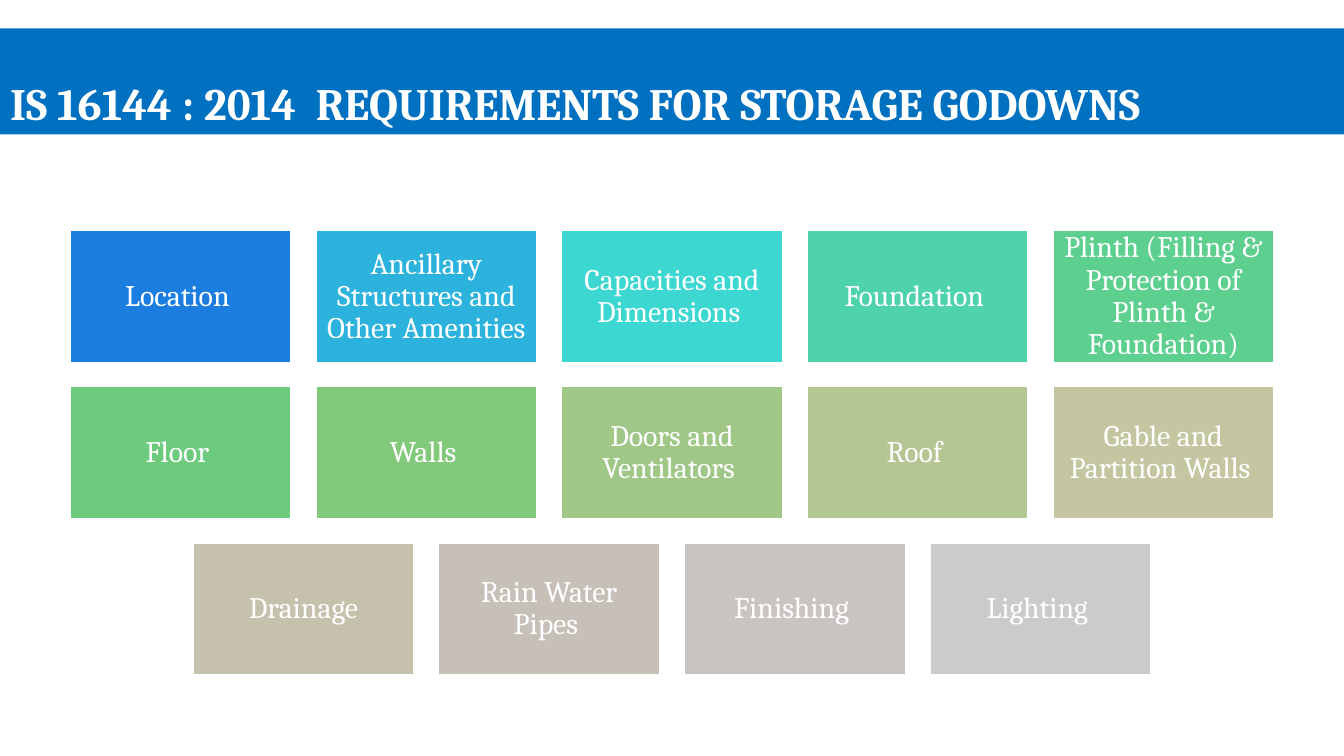
from pptx import Presentation
from pptx.dml.color import RGBColor
from pptx.enum import shapes, text
from pptx.util import Pt

WIDTH, HEIGHT = 720, 405
BOX_W, BOX_H = 119.6, 71.8
STEP_X, STEP_Y = 131.6, 83.6
TOP = 123
WHITE = "FFFFFF"

ROWS = [
    [("Location ", "1C7DE1"),
     ("Ancillary Structures and Other Amenities ", "2CB3DD"),
     ("Capacities and Dimensions ", "3DD7D2"),
     ("Foundation ", "4ED3AA"),
     ("Plinth (Filling & Protection of Plinth & Foundation)", "5DCF8E")],
    [("Floor ", "6CCB7C"),
     ("Walls ", "83C97B"),
     ("Doors and Ventilators ", "A0C788"),
     ("Roof ", "B5C695"),
     ("Gable and Partition Walls ", "C3C6A1")],
    [("Drainage", "C6C1AD"),
     ("Rain Water Pipes ", "C7C0B8"),
     ("Finishing ", "C9C4C2"),
     ("Lighting ", "CBCBCB")],
]


def paint(color, code):
    """Set a fill, line or font colour from a hex string."""
    color.rgb = RGBColor.from_string(code)


def fill(shape, code):
    """Give a shape a solid fill."""
    shape.fill.solid()
    paint(shape.fill.fore_color, code)


def write(shape, words, size, bold=False, align="LEFT", anchor="MIDDLE",
          inset=(5, 5), space=1.0, after=0):
    """Put formatted white text into a shape."""
    frame = shape.text_frame
    frame.text = words
    frame.word_wrap = True
    frame.auto_size = text.MSO_AUTO_SIZE.NONE
    frame.vertical_anchor = text.MSO_ANCHOR[anchor]
    frame.margin_left = frame.margin_right = Pt(inset[0])
    frame.margin_top = frame.margin_bottom = Pt(inset[1])
    para = frame.paragraphs[0]
    para.alignment = text.PP_ALIGN[align]
    para.line_spacing = space
    para.space_before, para.space_after = Pt(0), Pt(after)
    font = para.runs[0].font
    font.name, font.size, font.bold = "Cambria", Pt(size), bold
    paint(font.color, WHITE)


def banner(slide, words):
    """Turn the title placeholder into the full-width banner."""
    title = slide.shapes.title
    title.left, title.top = Pt(0), Pt(15.2)
    title.width, title.height = Pt(WIDTH), Pt(56.8)
    fill(title, "0070C0")
    write(title, words, 24, bold=True, anchor="BOTTOM", inset=(5.4, 2.7))


def tile(slide, x, y, words, code):
    """Draw one coloured tile with its label."""
    box = slide.shapes.add_shape(shapes.MSO_SHAPE.RECTANGLE,
                                 Pt(x), Pt(y), Pt(BOX_W), Pt(BOX_H))
    box.shadow.inherit = False
    fill(box, code)
    paint(box.line.color, WHITE)
    box.line.width = Pt(2)
    write(box, words, 16, align="CENTER", space=0.9, after=5.6)


def grid(slide, rows):
    """Lay out rows of tiles, each row centred on the slide."""
    for r, row in enumerate(rows):
        span = (len(row) - 1) * STEP_X + BOX_W
        left = (WIDTH - span) / 2
        for c, (words, code) in enumerate(row):
            tile(slide, left + c * STEP_X, TOP + r * STEP_Y, words, code)


def main():
    """Build and save the slide."""
    deck = Presentation()
    deck.slide_width, deck.slide_height = Pt(WIDTH), Pt(HEIGHT)
    slide = deck.slides.add_slide(deck.slide_layouts[5])
    banner(slide, "IS 16144 : 2014  REQUIREMENTS FOR STORAGE GODOWNS")
    grid(slide, ROWS)
    deck.save("out.pptx")


if __name__ == "__main__":
    main()
